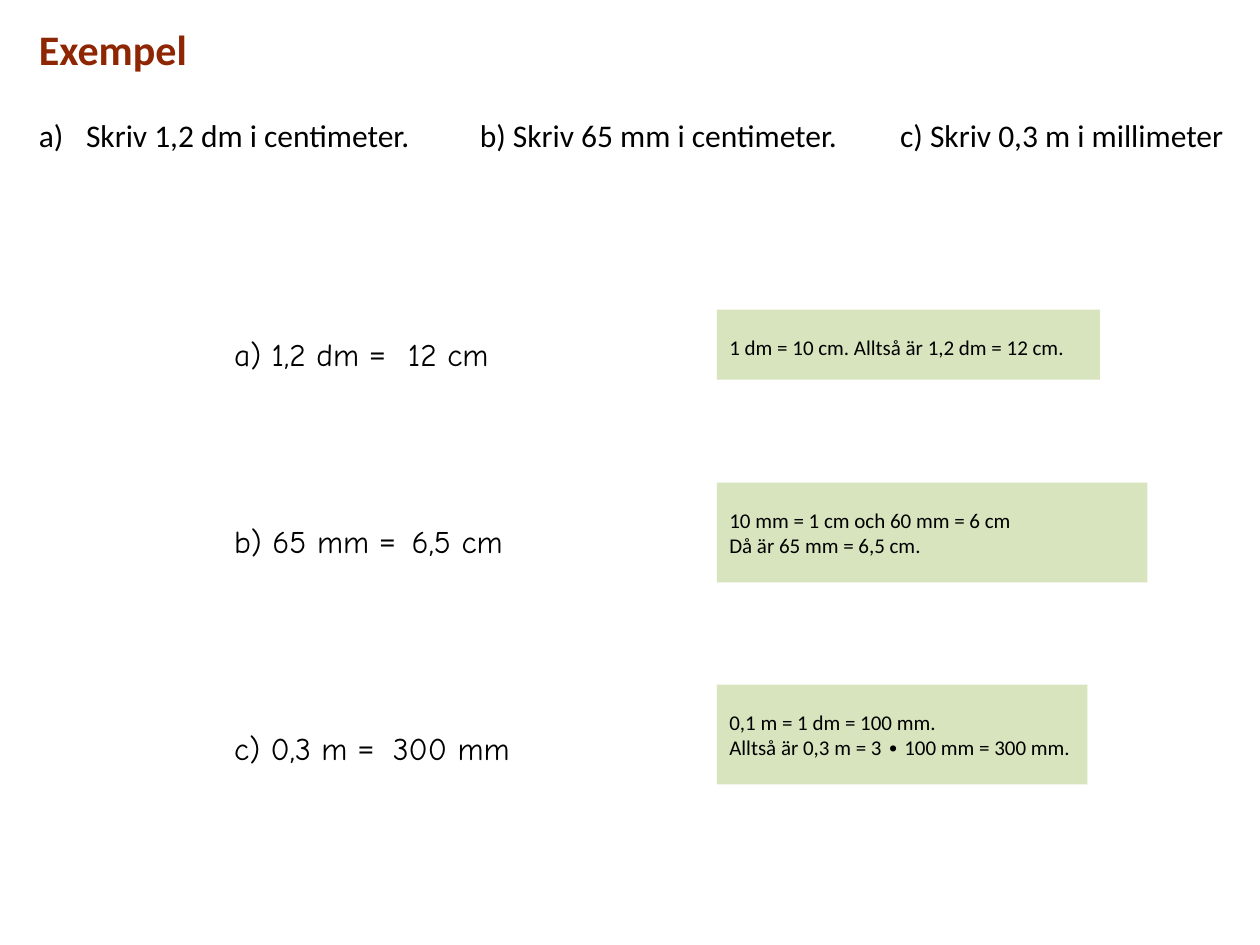
import pptx
import pptx.dml.color
import pptx.enum.shapes
import pptx.enum.text
import pptx.util
from lxml import etree

Pt = pptx.util.Pt
BLACK = pptx.dml.color.RGBColor(0x00, 0x00, 0x00)
RUST = pptx.dml.color.RGBColor(0x8E, 0x25, 0x03)
GREEN = pptx.dml.color.RGBColor(0xD7, 0xE4, 0xBD)
BODY, HAND = "Calibri", "Comic Neue"
CALC_LEFT, HINT_LEFT = 126.7, 409.7


def style_run(r, size, font=BODY, color=BLACK, bold=False):
    r.font.size = Pt(size)
    r.font.name = font
    r.font.color.rgb = color
    r.font.bold = bold


def add_text(s, left, top, width, height, parts, size=18, color=BLACK,
             bold=False, wrap=True):
    """Add a one-line text box; parts is a list of (text, font)."""
    sp = s.shapes.add_textbox(Pt(left), Pt(top), Pt(width), Pt(height))
    tf = sp.text_frame
    tf.word_wrap = wrap
    tf.auto_size = pptx.enum.text.MSO_AUTO_SIZE.SHAPE_TO_FIT_TEXT
    p = tf.paragraphs[0]
    for text, font in parts:
        r = p.add_run()
        r.text = text
        style_run(r, size, font, color, bold)
    return p


def number_paragraph(p, indent):
    """Number the paragraph a), b), c) with a hanging indent."""
    pPr = p._p.get_or_add_pPr()
    pPr.set("marL", str(Pt(indent)))
    pPr.set("indent", str(-Pt(indent)))
    ns = pptx.oxml.ns.qn("a:buFont")
    etree.SubElement(pPr, ns, typeface="+mj-lt")
    etree.SubElement(pPr, pptx.oxml.ns.qn("a:buAutoNum"), type="alphaLcParenR")


def add_hint(s, top, width, height, lines):
    sp = s.shapes.add_shape(pptx.enum.shapes.MSO_SHAPE.RECTANGLE,
                            Pt(HINT_LEFT), Pt(top), Pt(width), Pt(height))
    sp.shadow.inherit = False
    sp.fill.solid()
    sp.fill.fore_color.rgb = GREEN
    sp.line.fill.background()
    tf = sp.text_frame
    tf.word_wrap = True
    tf.vertical_anchor = pptx.enum.text.MSO_ANCHOR.TOP
    tf.margin_top = Pt(14)
    tf.text = "\n".join(lines)
    for p in tf.paragraphs:
        p.alignment = pptx.enum.text.PP_ALIGN.LEFT
        style_run(p.runs[0], 12)


def add_solution(s, top, task, answer_left, answer):
    add_text(s, CALC_LEFT, top, 124, 29, [(task + " ", HAND), ("=", BODY)])
    add_text(s, answer_left, top, 100, 29, [(answer, HAND)])


def main():
    prs = pptx.Presentation()
    prs.slide_width, prs.slide_height = Pt(720), Pt(540)
    s = prs.slides.add_slide(prs.slide_layouts[6])

    # Heading
    add_text(s, 15.1, 10.1, 100, 36, [("Exempel", BODY)], 24, RUST, True, False)

    # Questions
    p = add_text(s, 15.1, 62.8, 235, 29, [("Skriv 1,2 dm i centimeter.", BODY)])
    number_paragraph(p, 27)
    for left, width, text in [(267.1, 230, "b) Skriv 65 mm i centimeter."),
                              (507.3, 205, "c) Skriv 0,3 m i millimeter")]:
        add_text(s, left, 62.8, width, 29, [(text, BODY)])

    # Solutions
    for solution in [(187.9, "a) 1,2 dm", 226, "12 cm"),
                     (294.5, "b) 65 mm", 228.2, "6,5 cm"),
                     (413, "c) 0,3 m", 217.4, "300 mm")]:
        add_solution(s, *solution)

    # Explanations
    add_hint(s, 177, 218.8, 40, ["1 dm = 10 cm. Alltså är 1,2 dm = 12 cm."])
    add_hint(s, 275.8, 246, 57, ["10 mm = 1 cm och 60 mm = 6 cm",
                                 "Då är 65 mm = 6,5 cm."])
    add_hint(s, 391.2, 211.7, 57, ["0,1 m = 1 dm = 100 mm.",
                                   "Alltså är 0,3 m = 3 ∙ 100 mm = 300 mm."])

    prs.save("out.pptx")


if __name__ == "__main__":
    main()
